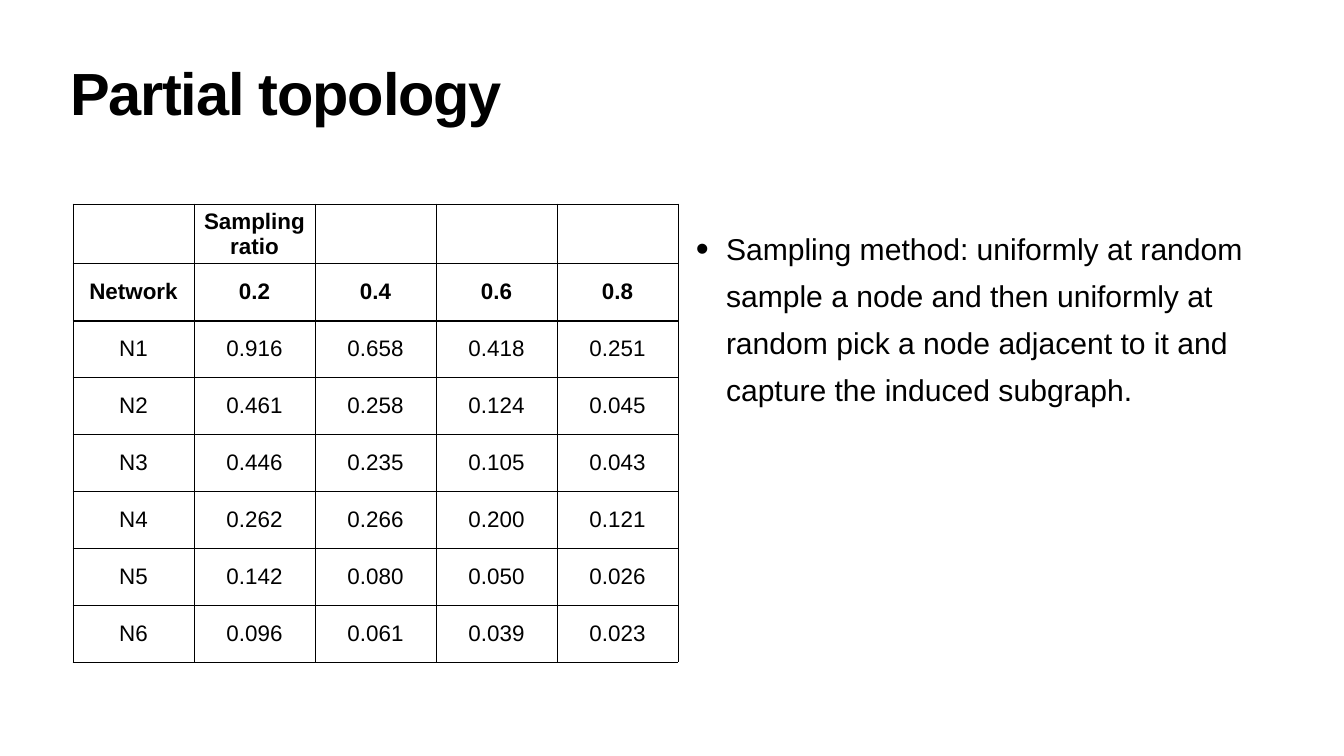
from lxml.etree import SubElement
from pptx import Presentation
from pptx.dml.color import RGBColor
from pptx.enum.text import MSO_ANCHOR, PP_ALIGN
from pptx.oxml.ns import qn
from pptx.util import Pt

PX = 914400 / 50.4
SLIDE = (1344, 756)
FONT, BLACK = "Arial", "000000"
INSET = 3

TITLE = "Partial topology"
TITLE_BOX = (67, 59, 1211, 79)
METHOD = (
    "Sampling method: uniformly at random sample a node and then uniformly at "
    "random pick a node adjacent to it and capture the induced subgraph."
)
METHOD_BOX = (693, 201, 613, 225)
BULLET_INDENT = 30

HEADER_ROWS = [
    ["", "Sampling ratio", "", "", ""],
    ["Network", "0.2", "0.4", "0.6", "0.8"],
]
RESULT_ROWS = [
    ["N1", "0.916", "0.658", "0.418", "0.251"],
    ["N2", "0.461", "0.258", "0.124", "0.045"],
    ["N3", "0.446", "0.235", "0.105", "0.043"],
    ["N4", "0.262", "0.266", "0.200", "0.121"],
    ["N5", "0.142", "0.080", "0.050", "0.026"],
    ["N6", "0.096", "0.061", "0.039", "0.023"],
]
TABLE_BOX = (73, 204, 605, 455)
THIN, THICK = 1, 3


def emu(px):
    return round(px * PX)


def color(hex_string):
    return RGBColor.from_string(hex_string)


def set_text(frame, text, size, bold=False, align=PP_ALIGN.LEFT, spacing=1.0, tracking=0):
    """Fill the frame's first paragraph and return it; tracking is in points."""
    paragraph = frame.paragraphs[0]
    paragraph.alignment = align
    paragraph.line_spacing = spacing
    run = paragraph.add_run()
    run.text = text
    run.font.name, run.font.size, run.font.bold = FONT, Pt(size), bold
    run.font.color.rgb = color(BLACK)
    if tracking:
        run.font._element.set("spc", str(round(tracking * 100)))
    return paragraph


def set_margins(target):
    target.margin_left = target.margin_right = emu(INSET)
    target.margin_top = target.margin_bottom = emu(INSET)


def add_text(slide, box, text, **text_format):
    frame = slide.shapes.add_textbox(*map(emu, box)).text_frame
    frame.word_wrap = True
    frame.vertical_anchor = MSO_ANCHOR.MIDDLE
    set_margins(frame)
    return set_text(frame, text, **text_format)


def add_bullet(paragraph, indent, percent):
    properties = paragraph._p.get_or_add_pPr()
    properties.set("marL", str(emu(indent)))
    properties.set("indent", str(-emu(indent)))
    SubElement(properties, qn("a:buSzPct"), val=str(percent * 1000))
    SubElement(properties, qn("a:buFont"), typeface=FONT)
    SubElement(properties, qn("a:buChar"), char="•")


def set_borders(cell, **widths):
    """Draw the named sides (L, R, T, B) with widths in points."""
    properties = cell._tc.get_or_add_tcPr()
    for index, (side, width) in enumerate(widths.items()):
        line = properties.makeelement(qn(f"a:ln{side}"), {"w": str(Pt(width))})
        fill = SubElement(line, qn("a:solidFill"))
        SubElement(fill, qn("a:srgbClr"), val=BLACK)
        properties.insert(index, line)


def add_results(slide):
    rows = HEADER_ROWS + RESULT_ROWS
    heads = len(HEADER_ROWS)
    left, top, width, height = TABLE_BOX
    table = slide.shapes.add_table(len(rows), len(rows[0]), *map(emu, TABLE_BOX)).table
    table.first_row = table.horz_banding = False
    for column in table.columns:
        column.width = emu(width / len(rows[0]))
    for r, values in enumerate(rows):
        table.rows[r].height = emu(height / len(rows))
        for c, value in enumerate(values):
            cell = table.cell(r, c)
            cell.fill.background()
            cell.vertical_anchor = MSO_ANCHOR.MIDDLE
            set_margins(cell)
            if value:
                set_text(cell.text_frame, value, size=32, bold=r < heads, align=PP_ALIGN.CENTER)
            set_borders(
                cell, L=THIN, R=THIN,
                T=THICK if r == heads else THIN,
                B=THICK if r == heads - 1 else THIN,
            )


def main():
    deck = Presentation()
    deck.slide_width, deck.slide_height = map(emu, SLIDE)
    slide = deck.slides.add_slide(deck.slide_layouts[6])
    add_text(slide, TITLE_BOX, TITLE, size=85, bold=True, spacing=0.8, tracking=-1.7)
    add_results(slide)
    method = add_text(slide, METHOD_BOX, METHOD, size=43, spacing=1.3)
    add_bullet(method, BULLET_INDENT, percent=123)
    deck.save("out.pptx")


if __name__ == "__main__":
    main()
